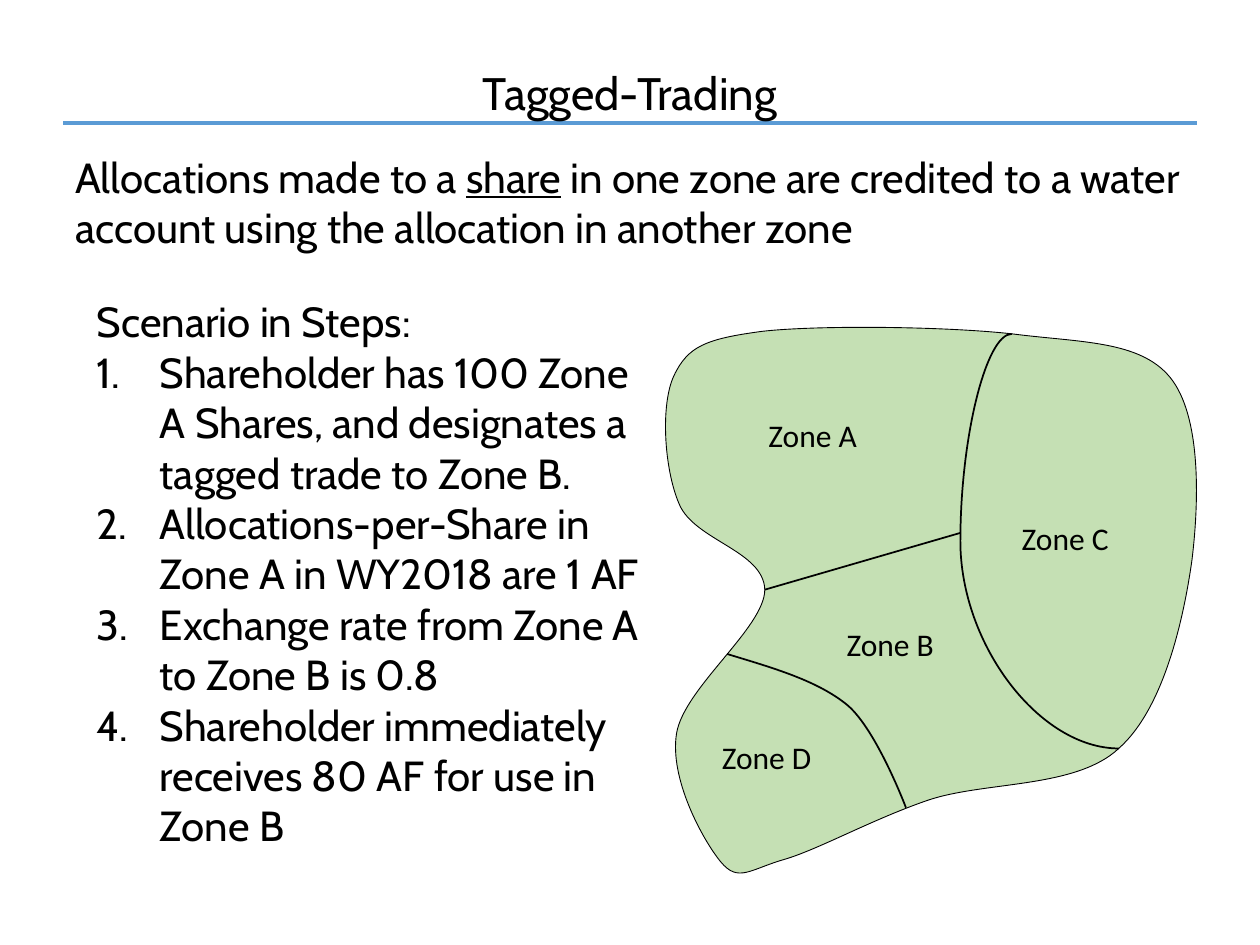
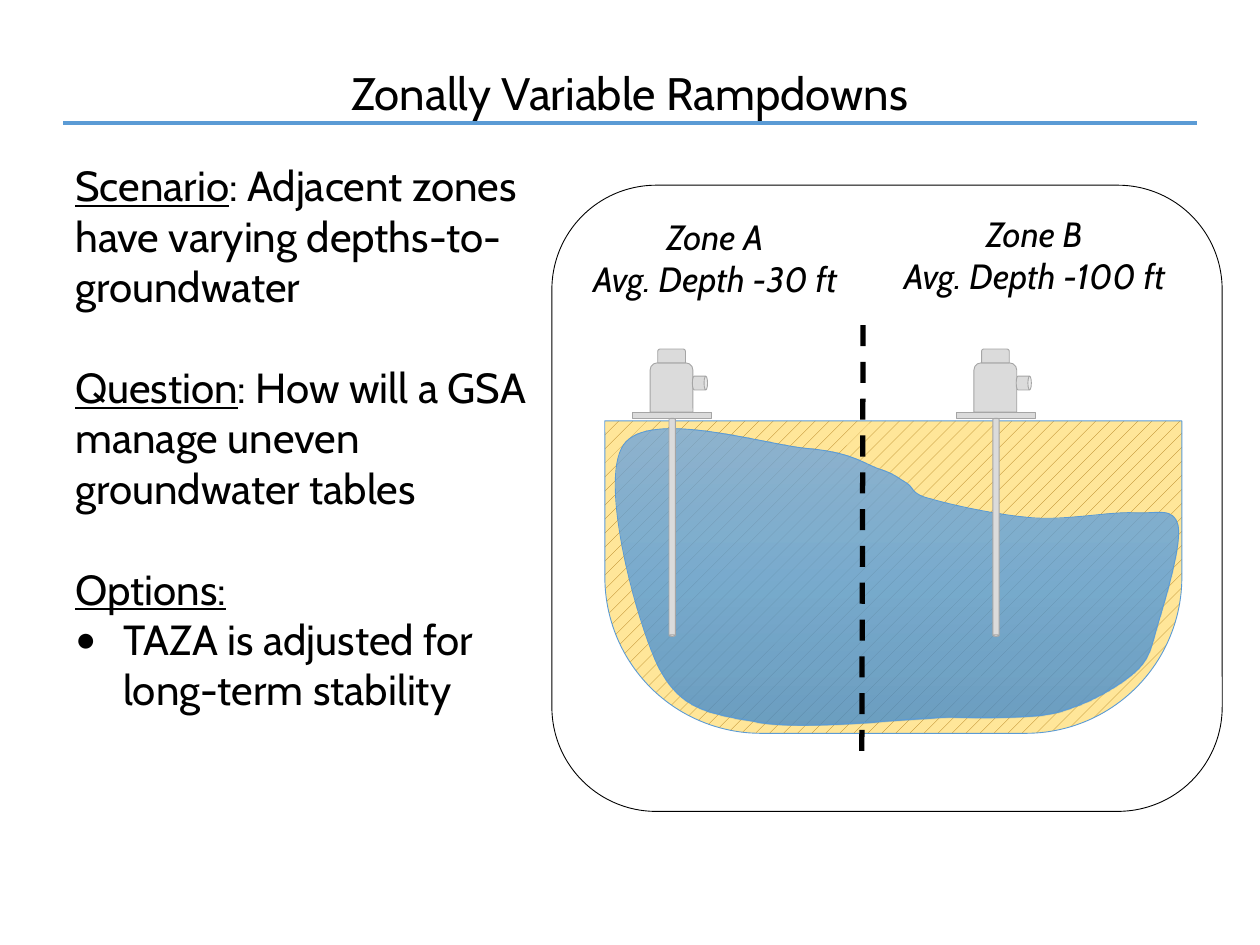
import pptx
import pptx.util
import pptx.dml.color
import pptx.enum.dml
import pptx.enum.shapes
import pptx.enum.text
import pptx.oxml
import pptx.oxml.ns
from lxml import etree

kinds = pptx.enum.shapes.MSO_SHAPE
links = pptx.enum.shapes.MSO_CONNECTOR
sides = pptx.enum.text.PP_ALIGN
qn = pptx.oxml.ns.qn
hues = {name: pptx.dml.color.RGBColor.from_string(code) for name, code in {
    "ink": "000000", "blue": "5B9BD5", "land": "C5E0B4", "steel": "DBDBDB",
    "edge": "A5A5A5", "sand": "FFE699", "grain": "AC7612"}.items()}
marks = {"1.": ("a:buAutoNum", "type", "arabicPeriod", 0.5),
         "•": ("a:buChar", "char", "•", 0.38)}

# The slide is a grid of 10 columns by 7.5 rows
deck = pptx.Presentation()
cell = pptx.util.Inches(1)
deck.slide_width, deck.slide_height = 10 * cell, int(7.5 * cell)


def write(page, box, paras, size=24, font="Cabin", side=sides.LEFT, slant=None):
    """Each paragraph is (mark, points before, [(text, underlined), ...])."""
    frame = page.shapes.add_textbox(*[int(n * cell) for n in box]).text_frame
    frame.word_wrap = True
    frame.auto_size = pptx.enum.text.MSO_AUTO_SIZE.SHAPE_TO_FIT_TEXT
    for rank, (mark, gap, runs) in enumerate(paras):
        para = frame.add_paragraph() if rank else frame.paragraphs[0]
        para.alignment = side
        if gap:
            para.space_before = pptx.util.Pt(gap)
        if mark:
            tag, key, value, dent = marks[mark]
            props = para._p.get_or_add_pPr()
            props.set("marL", str(int(dent * cell)))
            props.set("indent", str(-int(dent * cell)))
            if mark == "•":
                etree.SubElement(props, qn("a:buFont")).set("typeface", "Calibri")
            etree.SubElement(props, qn(tag)).set(key, value)
        for words, under in runs:
            run = para.add_run()
            run.text = words
            run.font.name, run.font.size = font, pptx.util.Pt(size)
            run.font.color.rgb = hues["ink"]
            run.font.underline, run.font.italic = under, slant


def curve(page, box, knots, hue, width, close=True):
    """Draw cubic curves in a box: a start, then two handles and an end for each."""
    left, top, wide, high = [int(n * cell) for n in box]
    spots = [(int(x * cell), int(y * cell)) for x, y in knots]
    pen = page.shapes.build_freeform(*spots[0], scale=1.0)
    pen.add_line_segments(spots[3::3], close=close)
    shape = pen.convert_to_shape()
    shape.left, shape.top, shape.width, shape.height = left, top, wide, high
    # Turn the straight pieces into Bézier pieces
    track = next(shape._element.iter(qn("a:path")))
    track.set("w", str(wide))
    track.set("h", str(high))
    pieces = [track.find(qn("a:moveTo"))] + track.findall(qn("a:lnTo"))
    for rank, piece in enumerate(pieces):
        piece.remove(piece[0])
        if rank:
            bend = etree.Element(qn("a:cubicBezTo"))
            track.replace(piece, bend)
            piece = bend
        for x, y in spots[max(0, 3 * rank - 2):3 * rank + 1]:
            etree.SubElement(piece, qn("a:pt"), x=str(x - left), y=str(y - top))
    shape.fill.background()
    shape.line.color.rgb = hues[hue]
    shape.line.width = pptx.util.Pt(width)
    return shape


# Title and rule on both slides
pages = []
for title in ("Tagged-Trading", "Zonally Variable Rampdowns"):
    page = deck.slides.add_slide(deck.slide_layouts[6])
    rule = page.shapes.add_connector(
        links.STRAIGHT, *[int(n * cell) for n in (0.5, 0.975, 9.5, 0.975)])
    rule.line.color.rgb, rule.line.width = hues["blue"], pptx.util.Pt(2.25)
    write(page, (0.5, 0.47, 9, 0.54), [("", 0, [(title, None)])], 26, side=sides.CENTER)
    pages.append(page)
trade, ramp = pages

# Trading: lead sentence
write(trade, (0.5, 1.15, 9, 0.91), [("", 0, [
    ("Allocations made to a ", None), ("share", True),
    (" in one zone are credited to a water account using the allocation in another zone", None)])])

# Trading: zone map
land = curve(trade, (5.28, 2.6, 4.21, 4.33), [
    (5.39, 4), (5.27, 3.72), (5.24, 3.21), (5.35, 2.98), (5.46, 2.75), (5.6, 2.69),
    (6.05, 2.63), (6.49, 2.58), (7.49, 2.59), (8.03, 2.65), (8.57, 2.72), (9.05, 2.7),
    (9.29, 3), (9.53, 3.3), (9.52, 3.96), (9.46, 4.45), (9.39, 4.94), (9.23, 5.63),
    (8.88, 5.94), (8.54, 6.26), (7.82, 6.2), (7.37, 6.35), (6.93, 6.5), (6.5, 6.74),
    (6.23, 6.82), (5.95, 6.9), (5.86, 7.01), (5.72, 6.84), (5.58, 6.67), (5.31, 6.18),
    (5.37, 5.82), (5.43, 5.46), (6.07, 4.98), (6.07, 4.68), (6.06, 4.37), (5.51, 4.29),
    (5.39, 4)], "ink", 0.5)
land.fill.solid()
land.fill.fore_color.rgb = hues["land"]
for kind, ends in ((links.CURVE, (8.03, 2.65, 8.88, 5.94)),
                   (links.STRAIGHT, (6.07, 4.68, 7.62, 4.23))):
    bound = trade.shapes.add_connector(kind, *[int(n * cell) for n in ends])
    bound.line.color.rgb, bound.line.width = hues["ink"], pptx.util.Pt(1)
    if kind == links.CURVE:
        shape = bound._element.spPr.find(qn("a:prstGeom"))
        bends = shape.find(qn("a:avLst"))
        if bends is None:
            bends = etree.SubElement(shape, qn("a:avLst"))
        etree.SubElement(bends, qn("a:gd"), name="adj1", fmla="val -48000")
for zone, left, top in (("A", 6, 3.25), ("C", 8.01, 4.07), ("B", 6.62, 4.91), ("D", 5.63, 5.81)):
    write(trade, (left, top, 1.02, 0.4), [("", 0, [("Zone " + zone, None)])], 18, "Calibri")
curve(trade, (5.77, 5.19, 1.42, 1.22),
      [(5.77, 5.19), (6.13, 5.3), (6.49, 5.4), (6.73, 5.6),
       (6.96, 5.8), (7.19, 6.41), (7.19, 6.41)], "ink", 1, close=False)

# Trading: steps
steps = ["Shareholder has 100 Zone A Shares, and designates a tagged trade to Zone B.",
         "Allocations-per-Share in Zone A in WY2018 are 1 AF",
         "Exchange rate from Zone A to Zone B is 0.8",
         "Shareholder immediately receives 80 AF for use in Zone B"]
write(trade, (0.67, 2.3, 4.54, 4.54), [("", 0, [("Scenario in Steps:", None)])]
      + [("1.", 0, [(step, None)]) for step in steps])

# Rampdowns: scenario, question and options
write(ramp, (0.5, 1.22, 4.12, 4.54), [
    ("", 0, [("Scenario", True), (": Adjacent zones have varying depths-to-groundwater", None)]),
    ("", 28.8, [("Question", True), (": How will a GSA manage uneven groundwater tables", None)]),
    ("", 28.8, [("Options:", True)]),
    ("•", 0, [("TAZA is adjusted for long-term stability", None)])])

# Rampdowns: basin
basin = ramp.shapes.add_shape(kinds.ROUND_2_SAME_RECTANGLE,
                              *[int(n * cell) for n in (4.8, 3.34, 4.58, 2.48)])
basin.rotation = 180
basin.adjustments[0], basin.adjustments[1] = 0.5, 0
basin.fill.patterned()
basin.fill.pattern = pptx.enum.dml.MSO_PATTERN.PERCENT_10
basin.fill.fore_color.rgb, basin.fill.back_color.rgb = hues["grain"], hues["sand"]
basin.line.color.rgb, basin.line.width = hues["blue"], pptx.util.Pt(0.5)

# Rampdowns: water with a see-through gradient
water = curve(ramp, (4.88, 3.4, 4.47, 2.35), [
    (4.95, 3.53), (5.15, 3.24), (6.07, 3.53), (6.41, 3.56), (6.75, 3.59), (6.84, 3.67),
    (6.97, 3.72), (7.1, 3.76), (7.12, 3.79), (7.19, 3.83), (7.26, 3.87), (7.22, 3.92),
    (7.39, 3.96), (7.56, 4.01), (7.93, 4.09), (8.2, 4.11), (8.47, 4.13), (8.81, 4.06),
    (9, 4.07), (9.19, 4.08), (9.31, 4.02), (9.35, 4.17), (9.38, 4.31), (9.26, 4.72),
    (9.2, 4.92), (9.14, 5.11), (9.14, 5.22), (9, 5.34), (8.86, 5.46), (8.61, 5.6),
    (8.36, 5.66), (8.12, 5.71), (7.54, 5.69), (7.54, 5.69), (7.15, 5.7), (6.4, 5.8),
    (6.02, 5.73), (5.63, 5.66), (5.4, 5.64), (5.22, 5.28), (5.05, 4.92), (4.75, 3.82),
    (4.95, 3.53)], "blue", 0.5)
props = water._element.spPr
blend = etree.Element(qn("a:gradFill"))
stops = etree.SubElement(blend, qn("a:gsLst"))
for place, code in ((0, "71A6DB"), (50, "559BDB"), (100, "448ACA")):
    stop = etree.SubElement(stops, qn("a:gs"), pos=str(place * 1000))
    tint = etree.SubElement(stop, qn("a:srgbClr"), val=code)
    etree.SubElement(tint, qn("a:alpha"), val="78000")
etree.SubElement(blend, qn("a:lin"), ang=str(90 * 60000), scaled="0")
props.replace(props.find(qn("a:noFill")), blend)

# Rampdowns: two pumps from the same parts, placed from the base plate's left
parts = [(kinds.ROUND_2_SAME_RECTANGLE, 0.14, 2.88, 0.34, 0.39, 0),
         (kinds.RECTANGLE, 0, 3.27, 0.63, 0.05, 0),
         (kinds.ROUND_2_SAME_RECTANGLE, 0.2, 2.77, 0.22, 0.11, 0),
         (kinds.CAN, 0.48, 2.98, 0.11, 0.12, 90),
         (kinds.CAN, 0.29, 3.32, 0.05, 1.73, 180)]
for base in (5.02, 7.59):
    for kind, left, top, wide, high, turn in parts:
        part = ramp.shapes.add_shape(
            kind, *[int(n * cell) for n in (base + left, top, wide, high)])
        part.rotation = turn
        part.fill.solid()
        part.fill.fore_color.rgb = hues["steel"]
        part.line.color.rgb, part.line.width = hues["edge"], pptx.util.Pt(0.5)

# Rampdowns: zone border, labels and frame
split = ramp.shapes.add_connector(
    links.STRAIGHT, *[int(n * cell) for n in (6.85, 2.58, 6.84, 6.01)])
split.line.color.rgb, split.line.width = hues["ink"], pptx.util.Pt(3)
split.line.dash_style = pptx.enum.dml.MSO_LINE.DASH
for zone, depth, box in (("A", 30, (4.52, 1.66, 2.31, 0.77)),
                         ("B", 100, (6.99, 1.64, 2.44, 0.77))):
    write(ramp, box, [("", 0, [(f"Zone {zone}", None)]),
                      ("", 0, [(f"Avg. Depth -{depth} ft", None)])],
          20, side=sides.CENTER, slant=True)
frame = ramp.shapes.add_shape(kinds.ROUNDED_RECTANGLE,
                              *[int(n * cell) for n in (4.38, 1.47, 5.32, 4.97)])
frame.fill.background()
frame.line.color.rgb, frame.line.width = hues["ink"], pptx.util.Pt(0.5)

# No shadows anywhere
for page in pages:
    for shape in page.shapes:
        if shape.shape_type == pptx.enum.shapes.MSO_SHAPE_TYPE.LINE:
            etree.SubElement(shape._element.spPr, qn("a:effectLst"))
        else:
            shape.shadow.inherit = False

deck.save("out.pptx")
